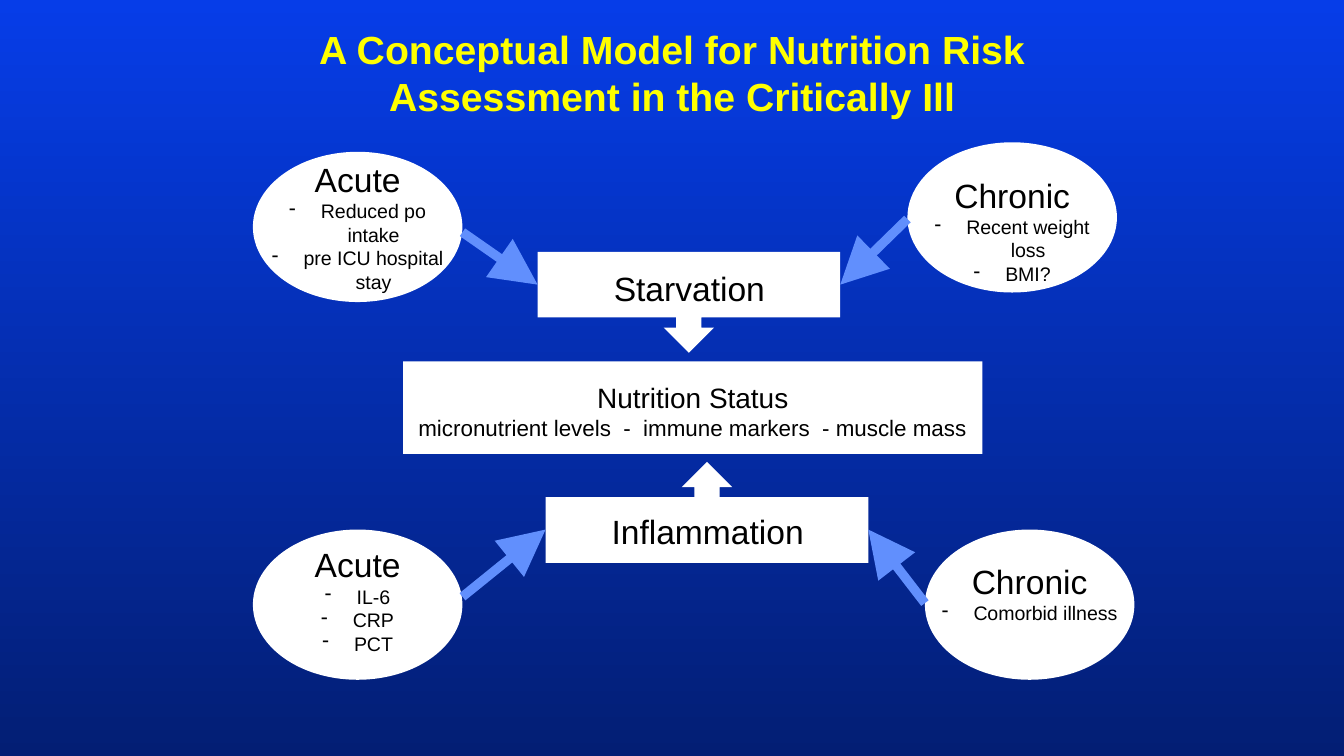
from dataclasses import dataclass

from lxml import etree
from pptx import Presentation
from pptx import util as u
from pptx.dml.color import RGBColor
from pptx.enum import shapes, text
from pptx.oxml.ns import qn

Cm, Pt = u.Cm, u.Pt


@dataclass(frozen=True)
class Theme:
    top: str = "063DE8"
    bottom: str = "031E74"
    panel: str = "FFFFFF"
    ink: str = "000000"
    title: str = "FFFF00"
    arrow: str = "618FFD"
    font: str = "Arial"
    title_size: float = 21
    head_size: float = 18
    status_size: float = 15
    detail_size: float = 12
    bullet_size: float = 10.5
    arrow_width: float = 5


T = Theme()


@dataclass(frozen=True)
class Box:
    """Position and size in centimetres."""
    left: float
    top: float
    width: float
    height: float

    def lengths(self) -> tuple:
        return Cm(self.left), Cm(self.top), Cm(self.width), Cm(self.height)


@dataclass(frozen=True)
class Line:
    words: str
    size: float
    bullet: bool = False
    bold: bool = False
    color: str = T.ink


@dataclass(frozen=True)
class Factor:
    """An ellipse with a heading and a dashed list."""
    left: float
    top: float
    text_offset: float
    heading: str
    items: tuple


@dataclass(frozen=True)
class Arrow:
    x1: float
    y1: float
    x2: float
    y2: float


ELLIPSE_W, ELLIPSE_H = 3.96, 2.84
BULLET_INDENT = Cm(0.6)

FACTORS = [
    Factor(4.78, 2.87, 0, "Acute", ("Reduced po intake", "pre ICU hospital stay")),
    Factor(17.15, 2.69, 0.48, "Chronic", ("Recent weight loss", "BMI?")),
    Factor(4.78, 10.01, 0.15, "Acute", ("IL-6", "CRP", "PCT")),
    Factor(17.48, 10.01, 0.46, "Chronic", ("Comorbid illness",)),
]
ARROWS = [
    Arrow(8.74, 4.39, 10.16, 5.38),
    Arrow(17.15, 4.14, 15.88, 5.38),
    Arrow(8.74, 11.28, 10.31, 10.01),
    Arrow(17.48, 11.4, 16.41, 10.01),
]


def add_panel(s, kind, box: Box, rotation: float = 0, adjustments: tuple = ()):
    sp = s.shapes.add_shape(kind, *box.lengths())
    sp.shadow.inherit = False
    sp.fill.solid()
    sp.fill.fore_color.rgb = RGBColor.from_string(T.panel)
    sp.line.fill.background()
    sp.rotation = rotation
    for i, value in enumerate(adjustments):
        sp.adjustments[i] = value
    return sp


def write(sp, lines: list, **frame_format) -> None:
    tf = sp.text_frame
    frame = {"word_wrap": True, "vertical_anchor": text.MSO_ANCHOR.TOP,
             "margin_left": Cm(0.23), "margin_right": Cm(0.23),
             "margin_top": Cm(0.13), "margin_bottom": Cm(0.13)}
    for name, value in {**frame, **frame_format}.items():
        setattr(tf, name, value)
    for i, line in enumerate(lines):
        p = tf.paragraphs[0] if i == 0 else tf.add_paragraph()
        p.alignment = text.PP_ALIGN.CENTER
        if line.bullet:
            add_dash(p)
        r = p.add_run()
        r.text = line.words
        r.font.color.rgb = RGBColor.from_string(line.color)
        for name, value in {"name": T.font, "size": Pt(line.size), "bold": line.bold}.items():
            setattr(r.font, name, value)


def add_dash(p) -> None:
    props = p._p.get_or_add_pPr()
    props.set("marL", str(BULLET_INDENT))
    props.set("indent", str(-BULLET_INDENT))
    etree.SubElement(props, qn("a:buChar")).set("char", "-")


def add_text(s, box: Box, lines: list) -> None:
    write(s.shapes.add_textbox(*box.lengths()), lines)


def add_factor(s, factor: Factor) -> None:
    add_panel(s, shapes.MSO_SHAPE.OVAL, Box(factor.left, factor.top, ELLIPSE_W, ELLIPSE_H))
    lines = [Line(factor.heading, T.head_size)]
    lines += [Line(item, T.bullet_size, bullet=True) for item in factor.items]
    add_text(s, Box(factor.left, factor.top + factor.text_offset,
                    ELLIPSE_W, ELLIPSE_H - factor.text_offset), lines)


def add_arrow(s, arrow: Arrow) -> None:
    sp = s.shapes.add_connector(shapes.MSO_CONNECTOR.STRAIGHT, Cm(arrow.x1), Cm(arrow.y1),
                                Cm(arrow.x2), Cm(arrow.y2))
    sp.line.color.rgb = RGBColor.from_string(T.arrow)
    sp.line.width = Pt(T.arrow_width)
    head = etree.SubElement(sp.line._get_or_add_ln(), qn("a:tailEnd"))
    for name, value in {"type": "triangle", "w": "lg", "len": "lg"}.items():
        head.set(name, value)
    etree.SubElement(sp._element.spPr, qn("a:effectLst"))


def main() -> None:
    prs = Presentation()
    prs.slide_width, prs.slide_height = Cm(25.4), Cm(14.29)
    s = prs.slides.add_slide(prs.slide_layouts[6])

    # Background, light at the top
    fill = s.background.fill
    fill.gradient()
    fill.gradient_angle = 270
    for stop, color in zip(fill.gradient_stops, (T.top, T.bottom)):
        stop.color.rgb = RGBColor.from_string(color)

    # Callouts pointing at the nutrition status
    callout = shapes.MSO_SHAPE.DOWN_ARROW_CALLOUT
    arrow_shape = (0.25, 0.25, 0.25, 0.65)
    add_panel(s, callout, Box(10.16, 4.76, 5.72, 1.91), adjustments=arrow_shape)
    add_panel(s, callout, Box(10.31, 8.73, 6.1, 1.91), rotation=180, adjustments=arrow_shape)

    # Nutrition status
    rectangle = shapes.MSO_SHAPE.RECTANGLE
    add_panel(s, rectangle, Box(7.62, 6.83, 10.95, 1.75))
    add_text(s, Box(7.62, 7.06, 10.95, 1.42), [
        Line("Nutrition Status", T.status_size),
        Line("micronutrient levels  -  immune markers  - muscle mass", T.detail_size)])

    # Callout labels
    starvation = add_panel(s, rectangle, Box(10.64, 4.92, 4.78, 0.79))
    write(starvation, [Line("Starvation", T.head_size)],
          vertical_anchor=text.MSO_ANCHOR.MIDDLE, margin_top=Cm(0.25), margin_bottom=0)
    add_text(s, Box(11.18, 9.53, 4.39, 1.1), [Line("Inflammation", T.head_size)])

    # Acute and chronic factors with their arrows
    for factor in FACTORS:
        add_factor(s, factor)
    for arrow in ARROWS:
        add_arrow(s, arrow)

    # Title
    add_text(s, Box(4.6, 0.34, 16.21, 2.39), [
        Line("A Conceptual Model for Nutrition Risk Assessment in the Critically Ill",
             T.title_size, bold=True, color=T.title)])

    prs.save("out.pptx")


if __name__ == "__main__":
    main()
